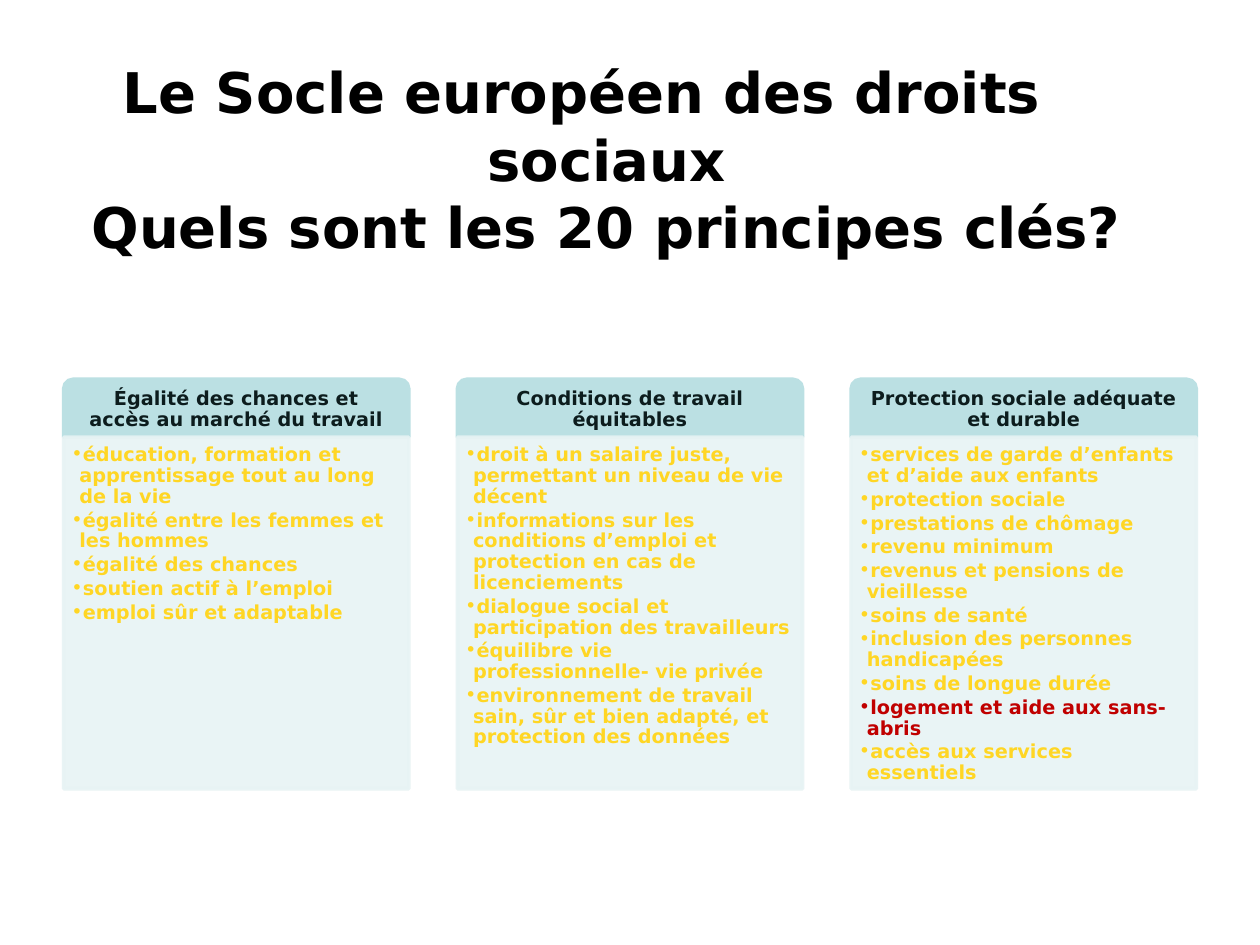
from lxml.etree import SubElement
from pptx import Presentation
from pptx.dml.color import RGBColor
from pptx.enum.shapes import MSO_SHAPE
from pptx.enum.text import MSO_ANCHOR, PP_ALIGN
from pptx.oxml.ns import qn
from pptx.util import Inches, Pt

COLORS = {
    "title": "000000",
    "header": "BBE0E3",
    "header_text": "0C1C1D",
    "panel": "E7F3F4",
    "principle": "FFD624",
    "highlight": "C00000",
}
FONT = "DejaVu Sans"
SLIDE_WIDTH, SLIDE_HEIGHT = 10, 7.5
COLUMN_WIDTH, COLUMN_PITCH = 2.74, SLIDE_WIDTH / 3.2
HEADER_HEIGHT, PANEL_HEIGHT = 0.46, 2.79
GRID_TOP = 3.01

TITLE = ("Le Socle européen des droits sociaux", "Quels sont les 20 principes clés?")
HIGHLIGHTED = "logement et aide aux sans-abris"
CHAPTERS = [
    ("Égalité des chances et accès au marché du travail", [
        "éducation, formation et apprentissage tout au long de la vie",
        "égalité entre les femmes et les hommes",
        "égalité des chances",
        "soutien actif à l’emploi",
        "emploi sûr et adaptable",
    ]),
    ("Conditions de travail équitables", [
        "droit à un salaire juste, permettant un niveau de vie décent",
        "informations sur les conditions d’emploi et protection en cas de licenciements",
        "dialogue social et participation des travailleurs",
        "équilibre vie professionnelle- vie privée",
        "environnement de travail sain, sûr et bien adapté, et protection des données",
    ]),
    ("Protection sociale adéquate et durable", [
        "services de garde d’enfants et d’aide aux enfants",
        "protection sociale",
        "prestations de chômage",
        "revenu minimum",
        "revenus et pensions de vieillesse",
        "soins de santé",
        "inclusion des personnes handicapées",
        "soins de longue durée",
        HIGHLIGHTED,
        "accès aux services essentiels",
    ]),
]
GRID_WIDTH = (len(CHAPTERS) - 1) * COLUMN_PITCH + COLUMN_WIDTH
GRID_LEFT = (SLIDE_WIDTH - GRID_WIDTH) / 2


def color(name):
    return RGBColor.from_string(COLORS[name])


def set_margins(text_frame, left, top, right, bottom):
    text_frame.margin_left, text_frame.margin_top = Pt(left), Pt(top)
    text_frame.margin_right, text_frame.margin_bottom = Pt(right), Pt(bottom)


def set_indent(paragraph, points):
    """Give the paragraph a hanging indent."""
    properties = paragraph._p.get_or_add_pPr()
    properties.set("marL", str(Pt(points)))
    properties.set("indent", str(-Pt(points)))
    return properties


def format_runs(paragraph, size, color_name):
    for run in paragraph.runs:
        run.font.name = FONT
        run.font.size = Pt(size)
        run.font.bold = True
        run.font.color.rgb = color(color_name)


def add_block(slide, preset, box, color_name):
    shape = slide.shapes.add_shape(preset, *(Inches(length) for length in box))
    shape.shadow.inherit = False
    shape.fill.solid()
    shape.fill.fore_color.rgb = color(color_name)
    shape.line.color.rgb = color(color_name)
    shape.line.width = Pt(2)
    shape.text_frame.word_wrap = True
    return shape


def add_title(slide, box):
    shape = slide.shapes.add_textbox(*(Inches(length) for length in box))
    text_frame = shape.text_frame
    text_frame.word_wrap = True
    text_frame.vertical_anchor = MSO_ANCHOR.MIDDLE
    paragraph = text_frame.paragraphs[0]
    paragraph.text = "\v".join(TITLE)
    paragraph.alignment = PP_ALIGN.CENTER
    set_indent(paragraph, 28)
    format_runs(paragraph, 32, "title")


def add_header(slide, box, heading):
    text_frame = add_block(slide, MSO_SHAPE.ROUND_2_SAME_RECTANGLE, box, "header").text_frame
    set_margins(text_frame, 8, 3.5, 8, 3.5)
    text_frame.vertical_anchor = MSO_ANCHOR.MIDDLE
    paragraph = text_frame.paragraphs[0]
    paragraph.text = heading
    paragraph.alignment = PP_ALIGN.CENTER
    paragraph.line_spacing = 0.9
    format_runs(paragraph, 11, "header_text")


def add_principles(slide, box, principles):
    panel = add_block(slide, MSO_SHAPE.RECTANGLE, box, "panel")
    for panel_color in panel._element.spPr.iter(qn("a:srgbClr")):
        SubElement(panel_color, qn("a:alpha")).set("val", "90000")
    text_frame = panel.text_frame
    set_margins(text_frame, 4.5, 4.5, 6, 7)
    text_frame.vertical_anchor = MSO_ANCHOR.TOP
    text_frame.text = "\n".join(principles)
    for paragraph in text_frame.paragraphs:
        paragraph.level = 1
        paragraph.alignment = PP_ALIGN.LEFT
        paragraph.line_spacing = 0.9
        paragraph.space_after = Pt(1.7)
        properties = set_indent(paragraph, 4.5)
        SubElement(properties, qn("a:buFont")).set("typeface", FONT)
        SubElement(properties, qn("a:buChar")).set("char", "•")
        highlighted = paragraph.text == HIGHLIGHTED
        format_runs(paragraph, 11, "highlight" if highlighted else "principle")


def add_chapter(slide, left, top, heading, principles):
    panel_box = (left, top + HEADER_HEIGHT, COLUMN_WIDTH, PANEL_HEIGHT)
    add_header(slide, (left, top, COLUMN_WIDTH, HEADER_HEIGHT), heading)
    add_principles(slide, panel_box, principles)


def main():
    presentation = Presentation()
    presentation.slide_width = Inches(SLIDE_WIDTH)
    presentation.slide_height = Inches(SLIDE_HEIGHT)
    slide = presentation.slides.add_slide(presentation.slide_layouts[6])
    add_title(slide, (0.12, 0.41, 0.9 * SLIDE_WIDTH, 1.7))
    for column, (heading, principles) in enumerate(CHAPTERS):
        add_chapter(slide, GRID_LEFT + column * COLUMN_PITCH, GRID_TOP, heading, principles)
    presentation.save("out.pptx")


if __name__ == "__main__":
    main()
